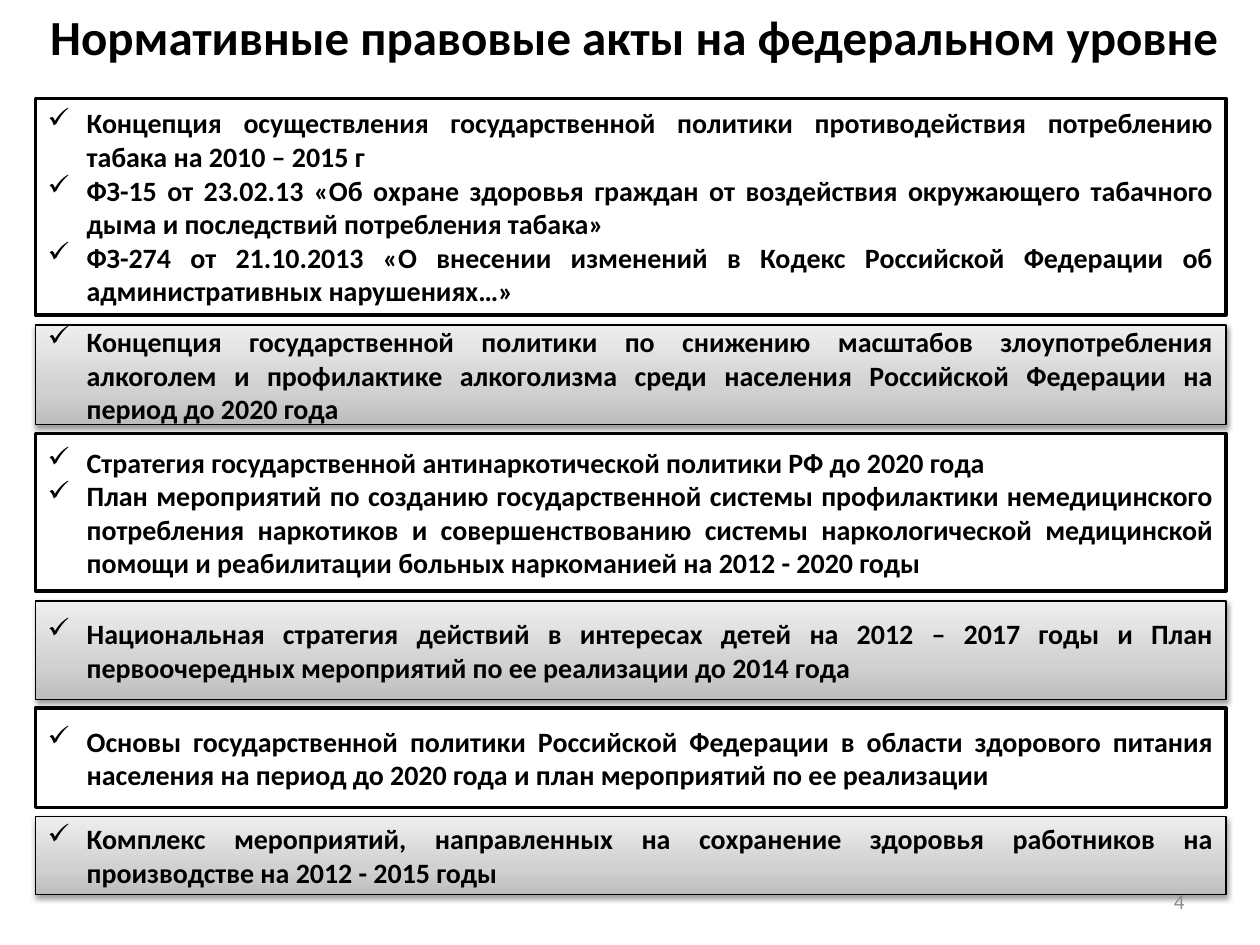
from lxml.etree import SubElement
from pptx import Presentation
from pptx.dml.color import RGBColor
from pptx.enum.shapes import MSO_SHAPE as Shape
from pptx.enum.text import MSO_ANCHOR as Anchor, PP_ALIGN as Align
from pptx.oxml.ns import qn
from pptx.util import Inches, Pt


def color(hex_string):
    return RGBColor.from_string(hex_string)


def style(paragraph, size, hex_string, bold, alignment):
    paragraph.alignment = alignment
    font = paragraph.font
    font.name, font.size, font.bold = "Calibri", Pt(size), bold
    font.color.rgb = color(hex_string)


presentation = Presentation()
presentation.slide_width, presentation.slide_height = Inches(10), Inches(7.5)
slide = presentation.slides.add_slide(presentation.slide_layouts[6])

# Title
title = slide.shapes.add_textbox(Inches(0.3), 0, Inches(9.57), Inches(1.04))
title.text_frame.word_wrap = False
title.text_frame.text = "Нормативные правовые акты на федеральном уровне"
style(title.text_frame.paragraphs[0], 28, "000000", True, Align.LEFT)

# Boxes of legal acts: top, height, items; white and grey alternate
boxes = [
    (0.78, 1.72, [
        "Концепция осуществления государственной политики противодействия "
        "потреблению табака на 2010 – 2015 г",
        "ФЗ-15 от 23.02.13 «Об охране здоровья граждан от воздействия "
        "окружающего табачного дыма и последствий потребления табака»",
        "ФЗ-274 от 21.10.2013 «О внесении изменений в Кодекс Российской "
        "Федерации об административных нарушениях…»"]),
    (2.58, 0.79, [
        "Концепция государственной политики по снижению масштабов "
        "злоупотребления алкоголем и профилактике алкоголизма среди "
        "населения Российской Федерации на период до 2020 года"]),
    (3.44, 1.25, [
        "Стратегия государственной антинаркотической политики РФ до 2020 года",
        "План мероприятий по созданию государственной системы профилактики "
        "немедицинского потребления наркотиков и совершенствованию системы "
        "наркологической медицинской помощи и реабилитации больных "
        "наркоманией на 2012 - 2020 годы"]),
    (4.77, 0.78, [
        "Национальная стратегия действий в интересах детей на 2012 – 2017 "
        "годы и План первоочередных мероприятий по ее реализации до 2014 года"]),
    (5.62, 0.79, [
        "Основы государственной политики Российской Федерации в области "
        "здорового питания населения на период до 2020 года и план "
        "мероприятий по ее реализации"]),
    (6.48, 0.62, [
        "Комплекс мероприятий, направленных на сохранение здоровья "
        "работников на производстве на 2012 - 2015 годы"]),
]
gradient_stops = [(0, "BDBDBD"), (35, "D1D1D1"), (100, "EEEEEE")]

for index, (top, height, items) in enumerate(boxes):
    box = slide.shapes.add_shape(
        Shape.RECTANGLE, Inches(0.28), Inches(top), Inches(9.45), Inches(height))
    box.shadow.inherit = False
    box.line.color.rgb = color("000000")

    if index % 2 == 0:
        box.fill.solid()
        box.fill.fore_color.rgb = color("FFFFFF")
        box.line.width = Pt(2)
    else:
        box.line.width = Pt(0.75)
        box.fill.gradient()
        box.fill.gradient_angle = 90
        properties = box.element.spPr
        stop_list = properties.find(".//" + qn("a:gsLst"))
        for stop in list(stop_list):
            stop_list.remove(stop)
        for position, shade in gradient_stops:
            stop = SubElement(stop_list, qn("a:gs"), pos=str(position * 1000))
            SubElement(stop, qn("a:srgbClr"), val=shade)
        # Soft shadow below the grey boxes
        shadow = SubElement(
            properties.find(qn("a:effectLst")), qn("a:outerShdw"),
            blurRad="40000", dist="20000", dir="5400000", rotWithShape="0")
        shadow_color = SubElement(shadow, qn("a:srgbClr"), val="000000")
        SubElement(shadow_color, qn("a:alpha"), val="38000")

    # Check-marked items
    frame = box.text_frame
    frame.word_wrap = True
    frame.vertical_anchor = Anchor.MIDDLE
    frame.text = "\n".join(items)
    for paragraph in frame.paragraphs:
        bullet_properties = paragraph._p.get_or_add_pPr()
        bullet_properties.set("marL", str(Inches(0.31)))
        bullet_properties.set("indent", str(-Inches(0.31)))
        SubElement(bullet_properties, qn("a:buChar"), char="✓")
        style(paragraph, 16, "000000", True, Align.JUSTIFY)

# Slide number
number = slide.shapes.add_textbox(
    Inches(7.17), Inches(6.95), Inches(2.33), Inches(0.4))
number.text_frame.word_wrap = True
number.text_frame.vertical_anchor = Anchor.MIDDLE
number.text_frame.text = "4"
style(number.text_frame.paragraphs[0], 12, "898989", False, Align.RIGHT)

presentation.save("out.pptx")
